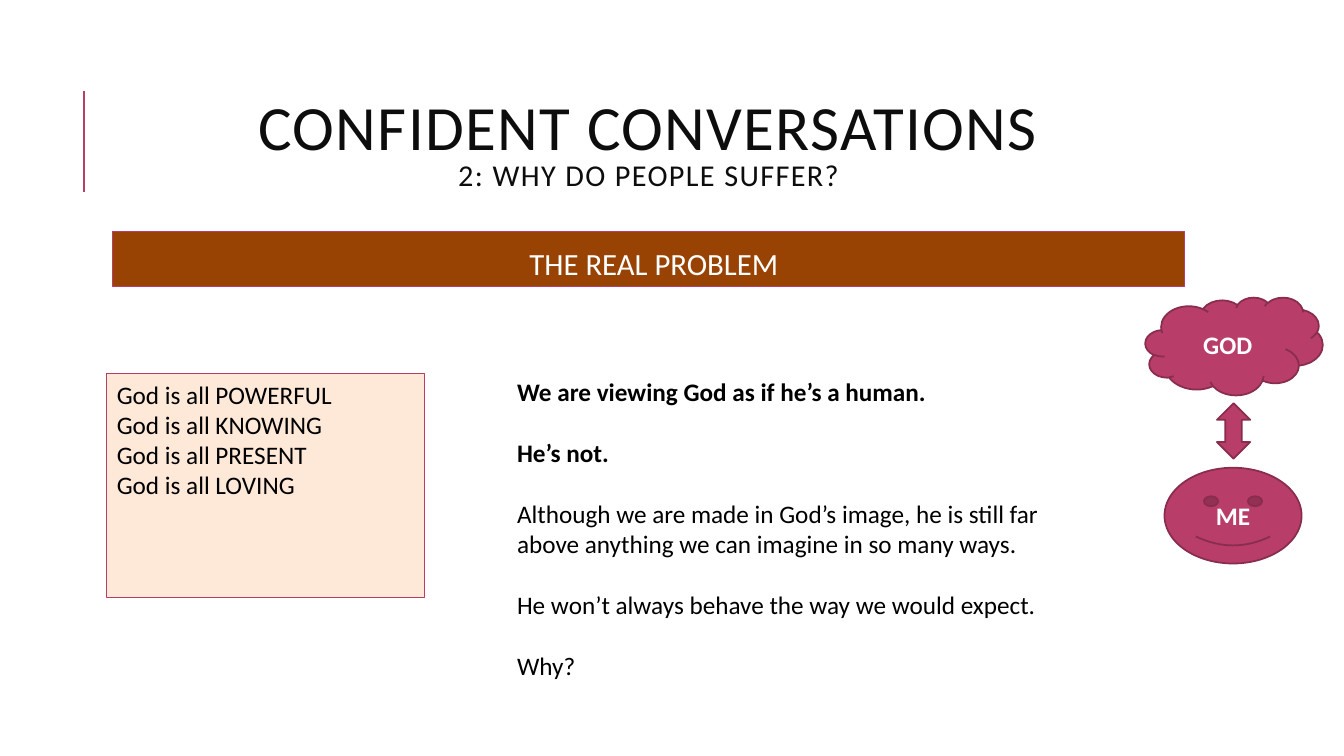
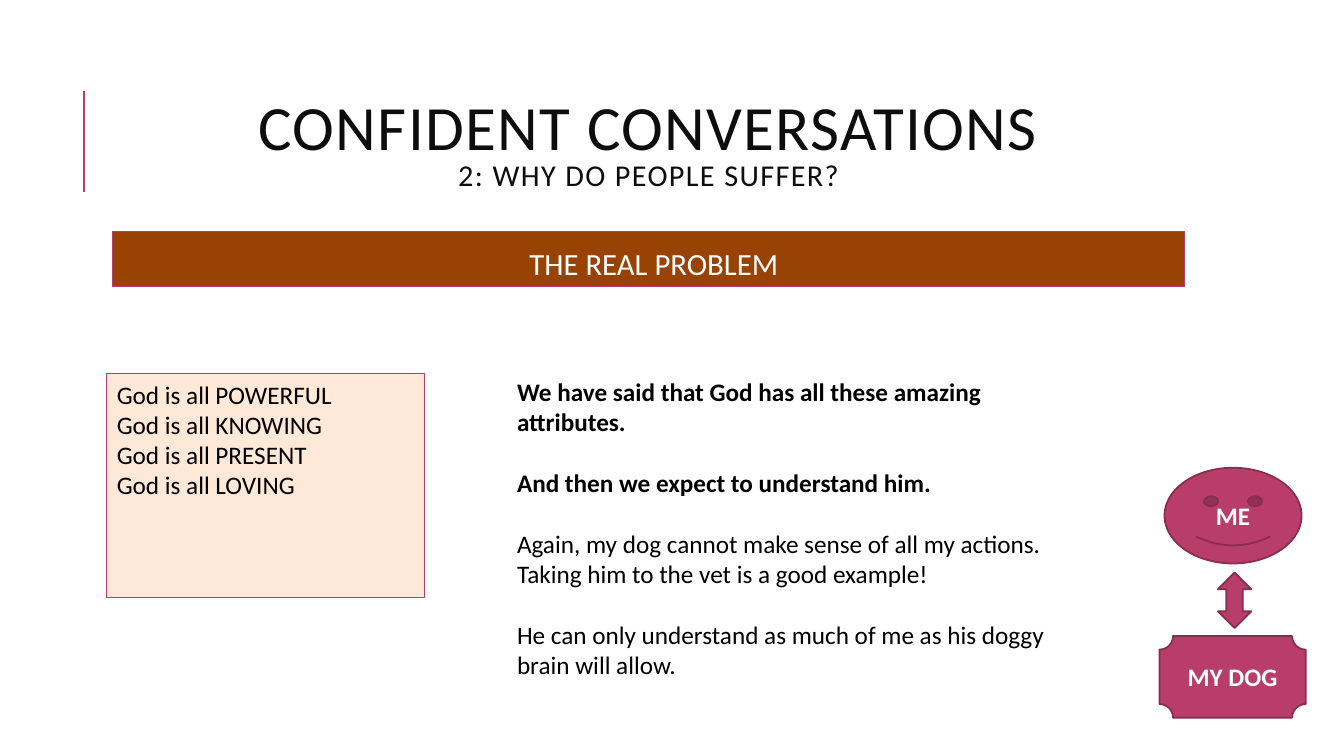
"""Build two slides on why people suffer and who God is."""
from dataclasses import dataclass

from lxml.etree import SubElement
from pptx import Presentation
from pptx.dml.color import RGBColor
from pptx.enum.shapes import MSO_CONNECTOR, MSO_SHAPE
from pptx.enum.text import MSO_ANCHOR, MSO_AUTO_SIZE, PP_ALIGN
from pptx.oxml.ns import qn
from pptx.util import Inches, Pt

FONT = "Calibri"
ROSE = RGBColor(0xB8, 0x3D, 0x68)
DARK_ROSE = RGBColor(0x88, 0x2D, 0x4D)
BROWN = RGBColor(0x98, 0x42, 0x04)
CREAM = RGBColor(0xFE, 0xE8, 0xD8)
INK = RGBColor(0x0D, 0x0D, 0x0D)
BLACK = RGBColor(0, 0, 0)
WHITE = RGBColor(0xFF, 0xFF, 0xFF)
BLANK_LINE = Pt(22)
ATTRIBUTES = ("POWERFUL", "KNOWING", "PRESENT", "LOVING")


@dataclass(frozen=True)
class Box:
    left: float
    top: float
    width: float
    height: float

    def lengths(self) -> tuple:
        return tuple(Inches(n) for n in (self.left, self.top, self.width, self.height))


@dataclass(frozen=True)
class Figure:
    preset: MSO_SHAPE
    box: Box
    label: str = ""


@dataclass(frozen=True)
class Lesson:
    claims: tuple[str, ...]
    explanations: tuple[str, ...]
    argument_box: Box
    figures: tuple[Figure, ...]


TITLE_BOX = Box(1.12, 0.64, 10.63, 1.64)
BANNER_BOX = Box(1.12, 2.3, 10.63, 0.54)
ATTRIBUTES_BOX = Box(1.06, 3.71, 3.15, 2.22)
ME = Figure(MSO_SHAPE.SMILEY_FACE, Box(11.55, 4.64, 1.36, 0.95), "ME")

LESSONS = (
    Lesson(
        ("We are viewing God as if he’s a human.", "He’s not."),
        (
            "Although we are made in God’s image, he is still far above anything "
            "we can imagine in so many ways.",
            "He won’t always behave the way we would expect.",
            "Why?",
        ),
        Box(5.03, 3.68, 5.99, 3.74),
        (
            Figure(MSO_SHAPE.CLOUD, Box(11.36, 2.95, 1.76, 0.97), "GOD"),
            ME,
            Figure(MSO_SHAPE.UP_DOWN_ARROW, Box(12.07, 4, 0.33, 0.55)),
        ),
    ),
    Lesson(
        (
            "We have said that God has all these amazing attributes.",
            "And then we expect to understand him.",
        ),
        (
            "Again, my dog cannot make sense of all my actions. "
            "Taking him to the vet is a good example!",
            "He can only understand as much of me as his doggy brain will allow.",
        ),
        Box(5.03, 3.68, 5.7, 3.13),
        (
            ME,
            Figure(MSO_SHAPE.PLAQUE, Box(11.5, 6.31, 1.45, 0.81), "MY DOG"),
            Figure(MSO_SHAPE.UP_DOWN_ARROW, Box(12.08, 5.68, 0.33, 0.55)),
        ),
    ),
)


def add_text(paragraph, text: str, *, size: float = 18, color: RGBColor = BLACK,
             bold: bool = False, tracking: int = 0) -> None:
    """Append a formatted run; tracking is in hundredths of a point."""
    run = paragraph.add_run()
    run.text = text
    run.font.name = FONT
    run.font.size = Pt(size)
    run.font.bold = bold
    run.font.color.rgb = color
    if tracking:
        run._r.get_or_add_rPr().set("spc", str(tracking))


def paint(part, fill: RGBColor, outline: RGBColor, weight: float) -> None:
    """Give a shape its fill and outline."""
    part.fill.solid()
    part.fill.fore_color.rgb = fill
    part.line.color.rgb = outline
    part.line.width = Pt(weight)


def place(part, box: Box) -> None:
    """Move and size a placeholder."""
    part.left, part.top, part.width, part.height = box.lengths()


def add_accent(slide) -> None:
    """Draw the upright line beside the title."""
    accent = slide.shapes.add_connector(
        MSO_CONNECTOR.STRAIGHT, Inches(0.83), Inches(1.9), Inches(0.83), Inches(0.9))
    accent.line.color.rgb = ROSE
    accent.line.width = Pt(1.5)
    SubElement(accent._element.spPr, qn("a:effectLst"))


def fill_title(title) -> None:
    """Set the two-line series title."""
    place(title, TITLE_BOX)
    frame = title.text_frame
    frame.auto_size = MSO_AUTO_SIZE.NONE
    frame.vertical_anchor = MSO_ANCHOR.MIDDLE
    heading = frame.paragraphs[0]
    heading.alignment = PP_ALIGN.CENTER
    heading.line_spacing = 0.8
    add_text(heading, "CONFIDENT CONVERSATIONS", size=45, color=INK, tracking=100)
    heading.add_line_break()
    add_text(heading, "2: WHY DO PEOPLE SUFFER?", size=21.6, color=INK, tracking=100)


def fill_banner(banner) -> None:
    """Set the brown section banner."""
    place(banner, BANNER_BOX)
    paint(banner, BROWN, ROSE, 0.75)
    frame = banner.text_frame
    frame.auto_size = MSO_AUTO_SIZE.NONE
    frame.vertical_anchor = MSO_ANCHOR.TOP
    frame.margin_left = frame.margin_right = Inches(0.05)
    frame.margin_top = frame.margin_bottom = Inches(0.05)
    section = frame.paragraphs[0]
    section.alignment = PP_ALIGN.CENTER
    section.line_spacing = 1.2
    section.space_before = Pt(0)
    section.space_after = Pt(2)
    properties = section._p.get_or_add_pPr()
    properties.set("marL", str(Inches(0.1)))
    properties.set("indent", str(-Inches(0.1)))
    SubElement(properties, qn("a:buChar"), char=" ")
    add_text(section, "THE REAL PROBLEM", size=22, color=WHITE)


def add_passage(slide, box: Box, lines: list[tuple[str, bool]], gap: int = 0):
    """Add a wrapped text box of (text, bold) lines."""
    passage = slide.shapes.add_textbox(*box.lengths())
    frame = passage.text_frame
    frame.word_wrap = True
    for number, (text, bold) in enumerate(lines):
        paragraph = frame.add_paragraph() if number else frame.paragraphs[0]
        paragraph.space_before = gap if number else 0
        add_text(paragraph, text, bold=bold)
    return passage


def add_figure(slide, figure: Figure) -> None:
    """Draw one part of the relationship diagram."""
    drawn = slide.shapes.add_shape(figure.preset, *figure.box.lengths())
    drawn.shadow.inherit = False
    paint(drawn, ROSE, DARK_ROSE, 1.25)
    if figure.label:
        label = drawn.text_frame.paragraphs[0]
        label.alignment = PP_ALIGN.CENTER
        add_text(label, figure.label, color=WHITE, bold=True)


def add_lesson(deck, lesson: Lesson) -> None:
    """Build one slide."""
    slide = deck.slides.add_slide(deck.slide_layouts[1])
    add_accent(slide)
    fill_title(slide.shapes.title)
    fill_banner(slide.placeholders[1])
    argument = [(claim, True) for claim in lesson.claims]
    argument += [(explanation, False) for explanation in lesson.explanations]
    add_passage(slide, lesson.argument_box, argument, BLANK_LINE)
    attributes = add_passage(
        slide, ATTRIBUTES_BOX, [(f"God is all {word}", False) for word in ATTRIBUTES])
    paint(attributes, CREAM, ROSE, 0.75)
    for figure in lesson.figures:
        add_figure(slide, figure)


def main() -> None:
    """Build and save the deck."""
    deck = Presentation()
    deck.slide_width, deck.slide_height = Inches(13.33), Inches(7.5)
    for lesson in LESSONS:
        add_lesson(deck, lesson)
    deck.save("out.pptx")


if __name__ == "__main__":
    main()
